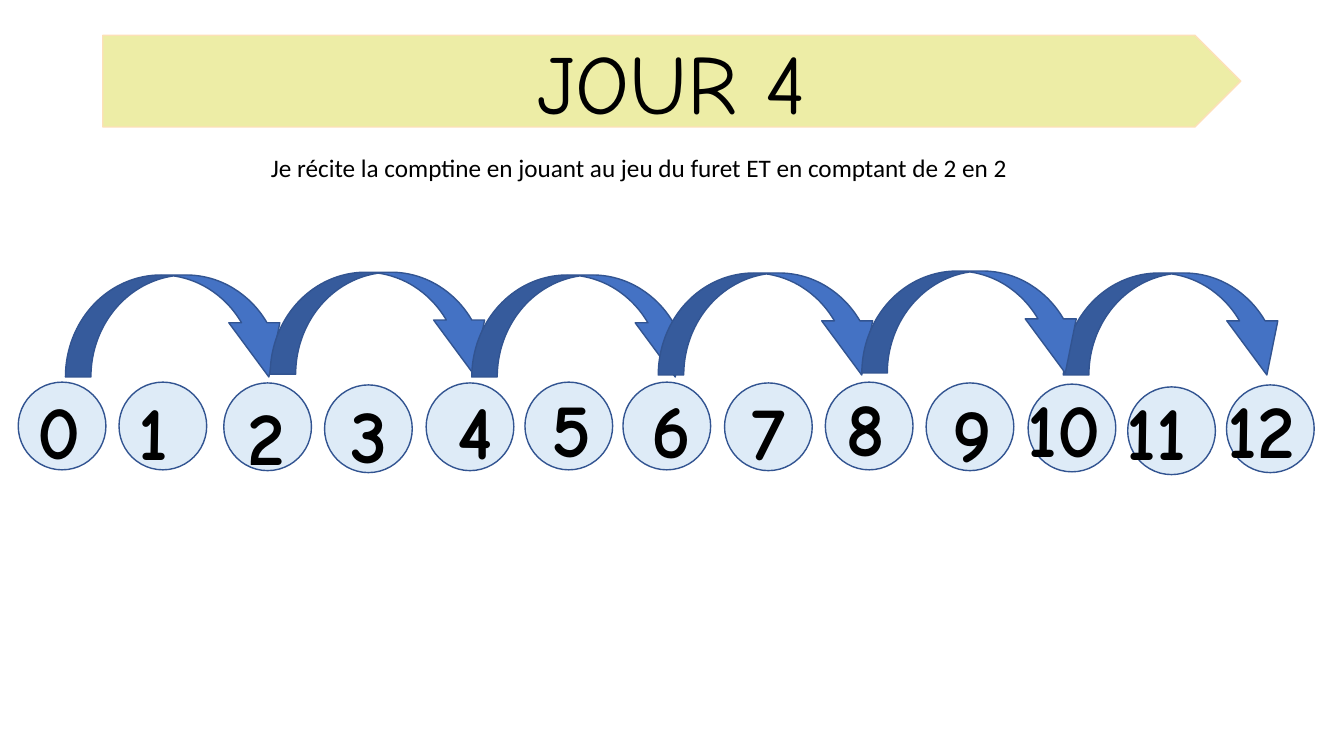
from pptx import Presentation
from pptx.dml.color import RGBColor
from pptx.enum.shapes import MSO_SHAPE
from pptx.enum.text import MSO_ANCHOR, PP_ALIGN
from pptx.util import Cm, Pt

BLACK = RGBColor(0x00, 0x00, 0x00)
BANNER = RGBColor(0xED, 0xED, 0xA6)
BANNER_EDGE = RGBColor(0xFD, 0xE0, 0xB8)
DISC = RGBColor(0xDE, 0xEB, 0xF7)
HOP = RGBColor(0x44, 0x72, 0xC4)
EDGE = RGBColor(0x32, 0x54, 0x91)

DISC_SIZE = 2.21
HOP_WIDTH, HOP_LENGTH = 2.57, 5.77

# Disc left and top, then numeral left and top, in cm within the number line
NUMBERS = [
    (0.46, 4.63, 0.69, 4.55),
    (3.00, 4.63, 3.23, 4.58),
    (5.64, 4.65, 5.99, 4.70),
    (8.18, 4.70, 8.59, 4.65),
    (10.74, 4.65, 11.28, 4.55),
    (13.23, 4.63, 13.64, 4.50),
    (15.70, 4.63, 16.18, 4.53),
    (18.26, 4.65, 18.69, 4.58),
    (20.80, 4.63, 21.08, 4.47),
    (23.34, 4.65, 23.75, 4.63),
    (25.91, 4.68, 25.65, 4.50),
    (28.42, 4.75, 28.14, 4.58),
    (30.91, 4.70, 30.68, 4.53),
]
# Left and top of each hop of two; the last one drawn lies on top
HOPS = [(3.25, 0.33), (8.41, 0.26), (13.49, 0.33),
        (18.19, 0.28), (28.40, 0.28), (23.32, 0.23)]


def add_filled(page, kind, left, top, width, height, fill, edge):
    shape = page.shapes.add_shape(kind, Cm(left), Cm(top), Cm(width), Cm(height))
    shape.shadow.inherit = False
    shape.fill.solid()
    shape.fill.fore_color.rgb = fill
    shape.line.color.rgb = edge
    shape.line.width = Pt(1)
    return shape


def write(box, text, font_name, size, bold=False, align=PP_ALIGN.LEFT):
    frame = box.text_frame
    frame.word_wrap = True
    frame.vertical_anchor = MSO_ANCHOR.TOP
    para = frame.paragraphs[0]
    para.text = text
    para.alignment = align
    para.font.name = font_name
    para.font.size = Pt(size)
    para.font.bold = bold
    para.font.color.rgb = BLACK


def add_text(page, left, top, width, height, text, font_name, size, bold=False):
    box = page.shapes.add_textbox(Cm(left), Cm(top), Cm(width), Cm(height))
    write(box, text, font_name, size, bold)


def add_banner(page, left, top, width, height):
    banner = add_filled(page, MSO_SHAPE.PENTAGON, left, top, width, height,
                        BANNER, BANNER_EDGE)
    title = page.shapes.title
    title.left, title.top = Cm(left + 4.8), Cm(top - 0.25)
    title.width, title.height = Cm(19.08), Cm(2.82)
    write(title, "JOUR 4", "Comic Neue", 60, align=PP_ALIGN.CENTER)
    # Bring the title in front of its banner
    banner._element.addnext(title._element)


def add_number_line(page, left, top):
    # Numbered discs
    for number, (disc_x, disc_y, text_x, text_y) in enumerate(NUMBERS):
        add_filled(page, MSO_SHAPE.OVAL, left + disc_x, top + disc_y,
                   DISC_SIZE, DISC_SIZE, DISC, EDGE)
        add_text(page, left + text_x, top + text_y,
                 DISC_SIZE if number < 10 else 3.1,
                 DISC_SIZE if 0 < number < 10 else 2.57,
                 str(number), "Comic Neue", 54, True)
    # Hops of two
    for hop_x, hop_y in HOPS:
        hop = add_filled(page, MSO_SHAPE.CURVED_RIGHT_ARROW, left + hop_x,
                         top + hop_y, HOP_WIDTH, HOP_LENGTH, HOP, EDGE)
        hop.rotation = 270
        hop.adjustments[2] = 0.531
        hop._element.spPr.xfrm.set("flipH", "1")


def main():
    deck = Presentation()
    deck.slide_width, deck.slide_height = Cm(33.87), Cm(19.05)
    page = deck.slides.add_slide(deck.slide_layouts[5])
    add_banner(page, 2.59, 0.89, 28.68, 2.31)
    add_text(page, 6.58, 3.71, 20.7, 1.02,
             "Je récite la comptine en jouant au jeu du furet ET en comptant de 2 en 2",
             "Calibri", 18)
    add_number_line(page, 0, 5)
    deck.save("out.pptx")


if __name__ == "__main__":
    main()
